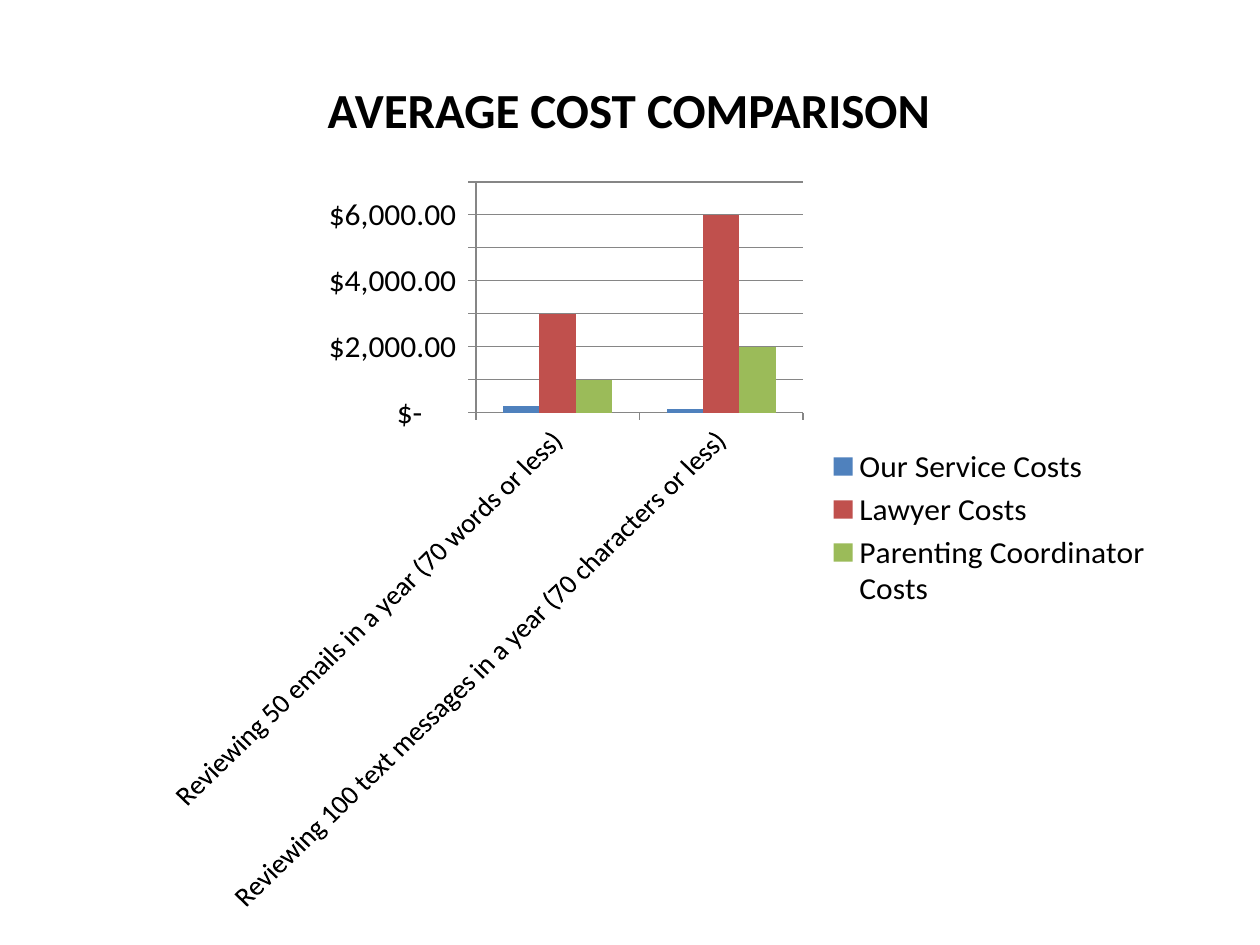
from dataclasses import dataclass

from pptx import Presentation
from pptx.chart.data import CategoryChartData
from pptx.dml.color import RGBColor
from pptx.enum.chart import XL_CHART_TYPE, XL_LEGEND_POSITION, XL_TICK_MARK
from pptx.enum.text import MSO_ANCHOR, MSO_AUTO_SIZE, PP_ALIGN
from pptx.util import Inches, Pt

COLUMN = XL_CHART_TYPE.COLUMN_CLUSTERED
RIGHT = XL_LEGEND_POSITION.RIGHT
OUTSIDE = XL_TICK_MARK.OUTSIDE
MIDDLE = MSO_ANCHOR.MIDDLE
FIT = MSO_AUTO_SIZE.SHAPE_TO_FIT_TEXT
CENTER = PP_ALIGN.CENTER

MONEY = r'_("$"* #,##0.00_);_("$"* \(#,##0.00\);_("$"* "-"??_);_(@_)'
TASKS = [
    "Reviewing 50 emails in a year (70 words or less)",
    "Reviewing 100 text messages in a year (70 characters or less)",
]
COSTS = {
    "Our Service Costs": (200, 100),
    "Lawyer Costs": (3000, 6000),
    "Parenting Coordinator Costs": (1000, 2000),
}


@dataclass(frozen=True)
class Theme:
    font: str = "Calibri"
    ink: str = "000000"
    rule: str = "868686"
    bars: tuple = ("4F81BD", "C0504D", "9BBB59")
    head: int = 28
    body: int = 18
    label: int = 16


class Deck:
    def __init__(self, theme):
        self.theme = theme
        self.file = Presentation()
        self.file.slide_width = Inches(10)
        self.file.slide_height = Inches(7.5)
        self.slide = self.file.slides.add_slide(self.file.slide_layouts[5])

    def style(self, font, size, bold=False):
        font.name = self.theme.font
        font.size = Pt(size)
        font.bold = bold
        font.color.rgb = RGBColor.from_string(self.theme.ink)

    def title(self, text, *box):
        shape = self.slide.shapes.title
        shape.left, shape.top, shape.width, shape.height = map(Inches, box)
        frame = shape.text_frame
        frame.text = text
        frame.word_wrap = True
        frame.auto_size = FIT
        frame.vertical_anchor = MIDDLE
        para = frame.paragraphs[0]
        para.alignment = CENTER
        self.style(para.font, self.theme.head, bold=True)

    def columns(self, cats, rows, *box):
        data = CategoryChartData(number_format=MONEY)
        data.categories = cats
        for name, vals in rows.items():
            data.add_series(name, vals)
        chart = self.slide.shapes.add_chart(
            COLUMN, *map(Inches, box), data).chart
        chart.has_title = False
        self.style(chart.font, self.theme.body)

        # Bars
        plot = chart.plots[0]
        plot.vary_by_categories = False
        plot.gap_width = 150
        for bar, color in zip(plot.series, self.theme.bars):
            bar.format.fill.solid()
            bar.format.fill.fore_color.rgb = RGBColor.from_string(color)

        # Axes
        rule = RGBColor.from_string(self.theme.rule)
        cat, val = chart.category_axis, chart.value_axis
        val.has_major_gridlines = True
        val.minimum_scale, val.maximum_scale, val.major_unit = 0, 7000, 1000
        val.tick_labels.number_format = MONEY
        val.tick_labels.number_format_is_linked = False
        for axis in (cat, val):
            axis.major_tick_mark = OUTSIDE
            axis.format.line.color.rgb = rule
        val.major_gridlines.format.line.color.rgb = rule
        self.style(val.tick_labels.font, self.theme.body)
        self.style(cat.tick_labels.font, self.theme.label)
        # Slant the task names upward by 45 degrees
        body = cat._element.txPr.bodyPr
        body.set("rot", "-2700000")
        body.set("vert", "horz")

        # Legend
        chart.has_legend = True
        chart.legend.position = RIGHT
        chart.legend.include_in_layout = False
        self.style(chart.legend.font, self.theme.body)


def main():
    deck = Deck(Theme())
    deck.columns(TASKS, COSTS, 1.17, 1.33, 8.08, 5.92)
    deck.title("AVERAGE COST COMPARISON", 2.24, 0.58, 5.5, 0.57)
    deck.file.save("out.pptx")


if __name__ == "__main__":
    main()
